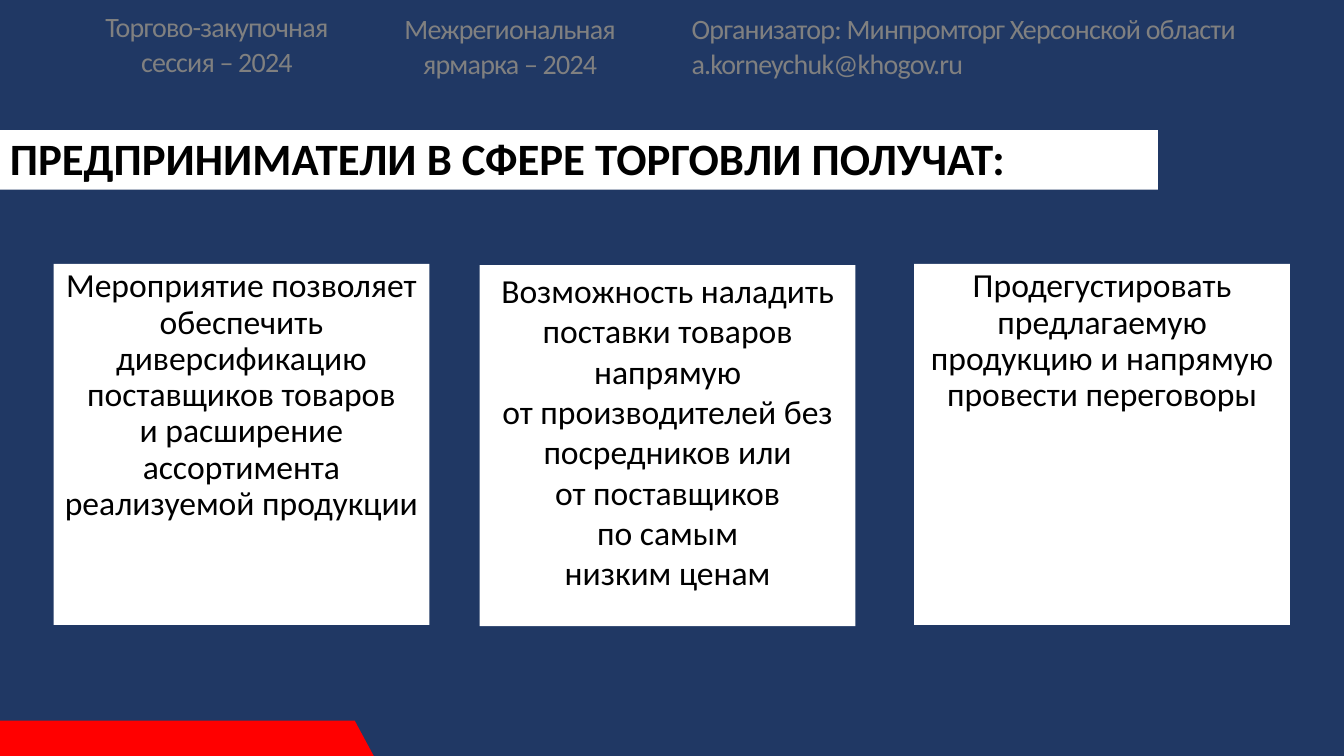
from pptx import Presentation
from pptx import util as u
from pptx.dml.color import RGBColor
from pptx.enum import shapes, text

COLORS = {
    "navy": "203864",
    "white": "FFFFFF",
    "black": "000000",
    "grey": "808080",
    "red": "FF0000",
}
LEFT, CENTER = text.PP_ALIGN.LEFT, text.PP_ALIGN.CENTER


class FairSlide:
    """Holds the style and the current slide."""

    font = "Calibri"

    def __init__(self, deck, background):
        self.slide = deck.slides.add_slide(deck.slide_layouts[6])
        fill = self.slide.background.fill
        fill.solid()
        fill.fore_color.rgb = self.color(background)

    def color(self, name):
        return RGBColor.from_string(COLORS[name])

    def paint(self, shape, color):
        shape.shadow.inherit = False
        shape.fill.solid()
        shape.fill.fore_color.rgb = self.color(color)
        shape.line.fill.background()

    def set_words(self, frame, words, size, color, align, spacing=1.0, gap=0,
                  bold=False, tracking=0):
        frame.word_wrap = True
        frame.text = words
        for index, paragraph in enumerate(frame.paragraphs):
            paragraph.alignment = align
            paragraph.line_spacing = spacing
            if index and gap:
                paragraph.space_before = u.Pt(gap)
            for run in paragraph.runs:
                run.font.name = self.font
                run.font.size = u.Pt(size)
                run.font.bold = bold
                run.font.color.rgb = self.color(color)
                if tracking:
                    run._r.get_or_add_rPr().set("spc", str(tracking))

    def panel(self, left, top, width, height, words, size, align, anchor,
              spacing=0.9, bold=False):
        panel = self.slide.shapes.add_shape(
            shapes.MSO_SHAPE.RECTANGLE,
            u.Cm(left), u.Cm(top), u.Cm(width), u.Cm(height))
        self.paint(panel, "white")
        panel.text_frame.vertical_anchor = anchor
        self.set_words(panel.text_frame, words, size, "black", align, spacing,
                       bold=bold)

    def header(self, left, top, width, words, align):
        header = self.slide.shapes.add_textbox(
            u.Cm(left), u.Cm(top), u.Cm(width), u.Cm(2))
        header.text_frame.margin_left = u.Cm(0.28)
        self.set_words(header.text_frame, words, 20, "grey", align, gap=1,
                       tracking=-60)
        header.text_frame.auto_size = text.MSO_AUTO_SIZE.SHAPE_TO_FIT_TEXT

    def outline(self, points, color):
        start, *others = [(u.Cm(x), u.Cm(y)) for x, y in points]
        builder = self.slide.shapes.build_freeform(*start)
        builder.add_line_segments(others, close=True)
        self.paint(builder.convert_to_shape(), color)


def main():
    deck = Presentation()
    deck.slide_width, deck.slide_height = u.Cm(33.87), u.Cm(19.05)
    fair = FairSlide(deck, "navy")

    # Title band
    fair.panel(0, 3.28, 29.18, 1.5, "ПРЕДПРИНИМАТЕЛИ В СФЕРЕ ТОРГОВЛИ ПОЛУЧАТ:",
               32, LEFT, text.MSO_ANCHOR.BOTTOM, bold=True)

    # Benefit cards: left, top, line spacing, wording (\v is a line break)
    benefits = [
        (1.35, 6.65, 0.9,
         "Мероприятие позволяет обеспечить диверсификацию поставщиков товаров\n"
         "и расширение ассортимента реализуемой продукции"),
        (12.09, 6.68, 1.0,
         "Возможность наладить поставки товаров напрямую\n"
         "от производителей без посредников или\vот поставщиков\v"
         "по самым\vнизким ценам"),
        (23.04, 6.65, 0.9,
         "Продегустировать предлагаемую продукцию и напрямую "
         "провести переговоры"),
    ]
    for left, top, spacing, benefit in benefits:
        fair.panel(left, top, 9.47, 9.1, benefit, 24, CENTER,
                   text.MSO_ANCHOR.TOP, spacing)

    # Event names and organiser
    fair.header(2.34, 0.12, 6.22, "Торгово-закупочная\nсессия – 2024", CENTER)
    fair.header(9.73, 0.16, 6.22, "Межрегиональная\nярмарка – 2024", CENTER)
    fair.header(17.15, 0.16, 14.4, "Организатор: Минпромторг Херсонской области\n"
                "a.korneychuk@khogov.ru", LEFT)

    # Red corner ribbon
    fair.outline([(0, 18.16), (8.94, 18.16), (9.42, 19.05), (0, 19.05)], "red")

    deck.save("out.pptx")


if __name__ == "__main__":
    main()
